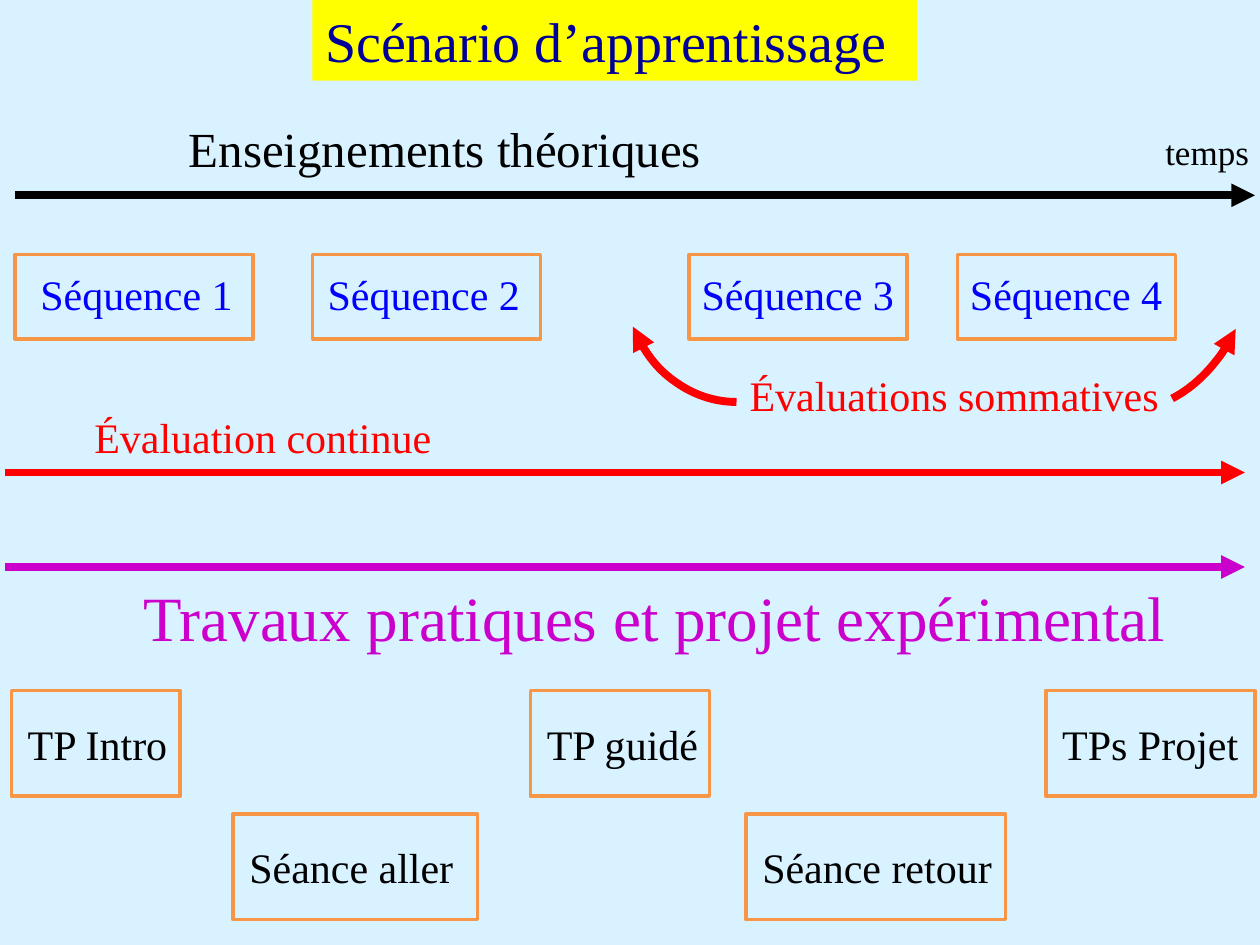
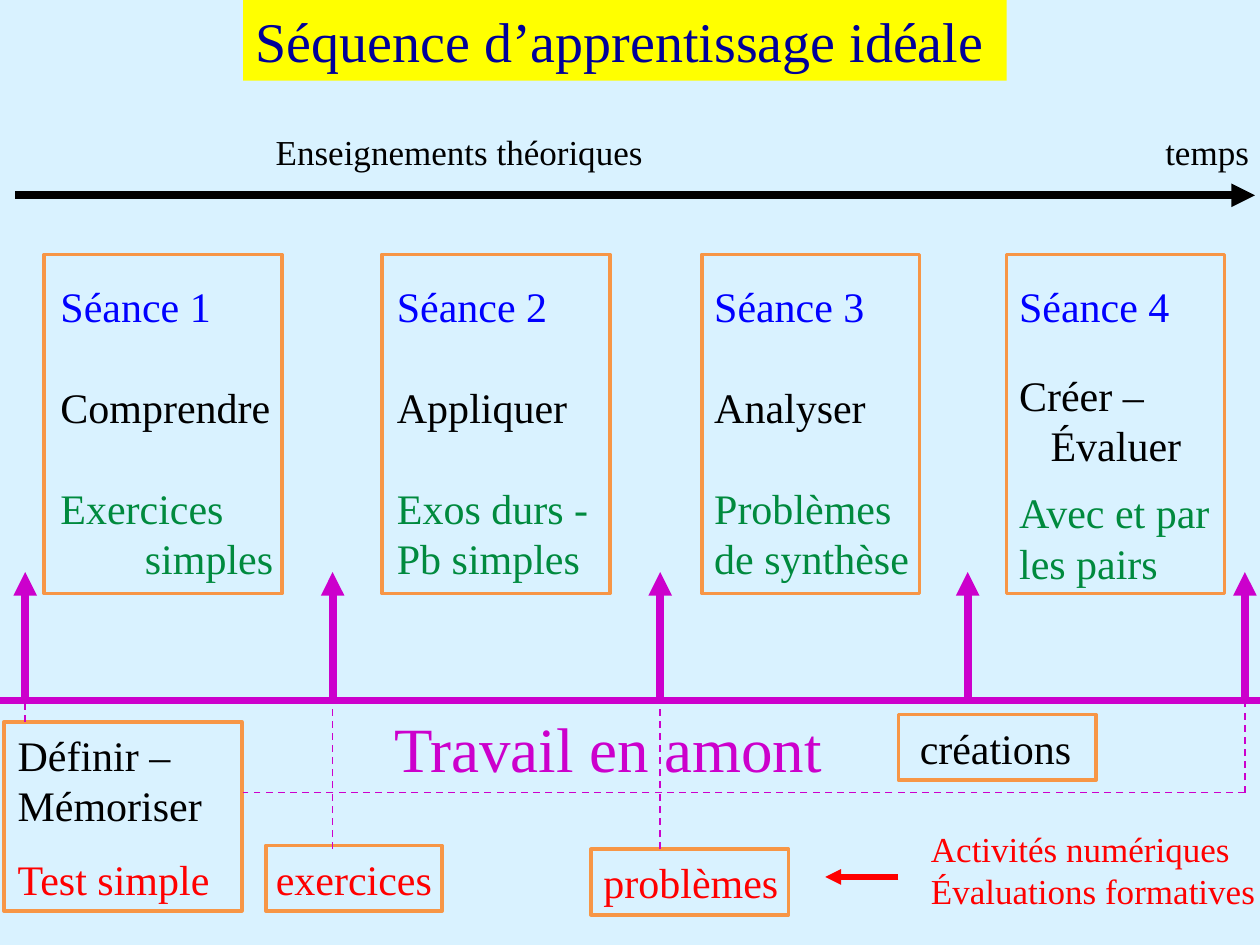
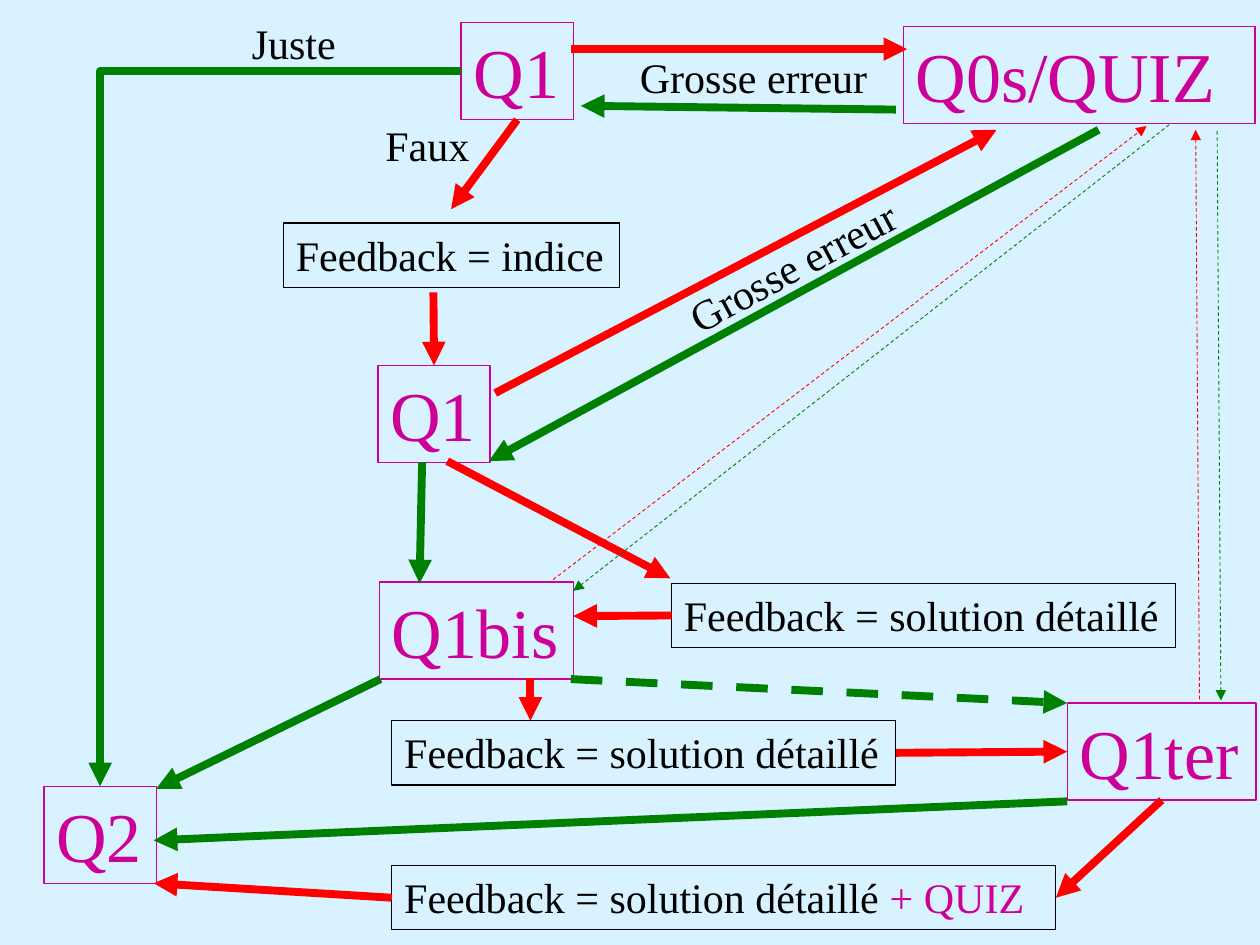
from dataclasses import dataclass

from lxml import etree
from pptx import Presentation
from pptx.dml.color import RGBColor
from pptx.enum.dml import MSO_LINE
from pptx.enum.shapes import MSO_CONNECTOR, MSO_SHAPE
from pptx.enum.text import MSO_ANCHOR, MSO_AUTO_SIZE, PP_ALIGN
from pptx.oxml.ns import qn
from pptx.util import Inches, Pt

STRAIGHT, ELBOW = MSO_CONNECTOR.STRAIGHT, MSO_CONNECTOR.ELBOW
RECTANGLE, ARC = MSO_SHAPE.RECTANGLE, MSO_SHAPE.ARC
TOP, MIDDLE = MSO_ANCHOR.TOP, MSO_ANCHOR.MIDDLE
LEFT, DASH, FIXED = PP_ALIGN.LEFT, MSO_LINE.DASH, MSO_AUTO_SIZE.NONE
TITLE_ONLY, BLANK = 5, 6
SITE_TOP, SITE_LEFT, SITE_BOTTOM, SITE_RIGHT = range(4)
SITES = {SITE_TOP: (0.5, 0), SITE_LEFT: (0, 0.5), SITE_BOTTOM: (0.5, 1), SITE_RIGHT: (1, 0.5)}


@dataclass(frozen=True)
class Theme:
    font: str = "Times New Roman"
    background: str = "D9F2FF"
    band: str = "FFFF00"
    title: str = "000099"
    ink: str = "000000"
    blue: str = "0000FF"
    red: str = "FF0000"
    violet: str = "CC00CC"
    magenta: str = "CC0099"
    exercise: str = "008A3E"
    green: str = "008000"
    orange: str = "F79646"
    small: int = 20
    body: int = 24
    large: int = 28
    heading: int = 32
    banner: int = 36
    question: int = 40
    thick: float = 4.5
    medium: float = 3
    frame: float = 2
    thin: float = 1
    outline: float = 0.75
    hairline: float = 0.5


THEME = Theme()


def paragraph(text, color=THEME.ink, before=0, indent=0):
    return {"spans": [(text, color)], "before": before, "indent": indent}


TIME_AXIS = ((0.12, 1.55), (9.96, 1.55))
TIME_LABEL = ("temps", (9.15, 0.99, 0.86, 0.44), THEME.small, THEME.ink)

SCENARIO_TITLE = ("Scénario d’apprentissage", 2.48, 4.8)
SEQUENCE_TOP, SEQUENCE_HEIGHT = 2.02, 0.67
SEQUENCES = [("Séquence 1", 0.12, 1.89, 0.2), ("Séquence 2", 2.48, 1.81, 0.12),
             ("Séquence 3", 5.47, 1.73, 0.1), ("Séquence 4", 7.6, 1.73, 0.1)]
PRACTICAL_TOPS, PRACTICAL_HEIGHT = (5.48, 6.46), 0.84
PRACTICALS = [("TP Intro", 0.09, 1.34), ("Séance aller", 1.85, 1.94), ("TP guidé", 4.21, 1.42),
              ("Séance retour", 5.92, 2.06), ("TPs Projet", 8.3, 1.66)]
SCENARIO_LABELS = [
    ("Enseignements théoriques", (1.4, 0.89, 4.26, 0.57), THEME.large, THEME.ink),
    ("Évaluations sommatives", (5.85, 2.88, 3.48, 0.5), THEME.body, THEME.red),
    ("Évaluation continue", (0.65, 3.22, 2.9, 0.5), THEME.body, THEME.red),
    ("Travaux pratiques et projet expérimental", (1.04, 4.54, 8.4, 0.71), THEME.banner, THEME.violet),
    TIME_LABEL,
]
SCENARIO_AXES = [(3.75, THEME.red), (4.5, THEME.violet)]
EVALUATION_ARCS = [((4.94, 1.14, 1.81, 2.05), 180, (162, 199.53), "tailEnd"),
                   ((7.94, 1.28, 2.27, 1.71), 105, (172.83, 199.53), "headEnd")]

SEQUENCE_TITLE = ("Séquence d’apprentissage idéale", 1.93, 6.06)
SESSION_TOP, SESSION_HEIGHT, SKIPPED_LINE = 2.02, 2.69, 28.8
SESSIONS = [
    (0.35, 1.89, 0.13, [paragraph("Séance 1", THEME.blue),
                        paragraph("Comprendre", before=SKIPPED_LINE),
                        paragraph("Exercices", THEME.exercise, SKIPPED_LINE),
                        paragraph("simples", THEME.exercise, indent=0.67)]),
    (3.03, 1.81, 0.12, [paragraph("Séance 2", THEME.blue),
                        paragraph("Appliquer", before=SKIPPED_LINE),
                        paragraph("Exos durs - Pb simples", THEME.exercise, SKIPPED_LINE)]),
    (5.57, 1.73, 0.1, [paragraph("Séance 3", THEME.blue),
                       paragraph("Analyser", before=SKIPPED_LINE),
                       paragraph("Problèmes de synthèse", THEME.exercise, SKIPPED_LINE)]),
    (7.99, 1.73, 0.1, [paragraph("Séance 4", THEME.blue),
                       paragraph("Créer –", before=21.6),
                       paragraph("Évaluer", indent=0.25),
                       paragraph("Avec et par les pairs", THEME.exercise, 9.6)]),
]
HOMEWORK = [
    ((0.03, 5.73, 1.89, 1.5), 0.11, [paragraph("Définir –"), paragraph("Mémoriser"),
                                     paragraph("Test simple", THEME.red, 13.2)]),
    ((2.11, 6.71, 1.4, 0.52), 0.08, [paragraph("exercices", THEME.red)]),
    ((4.69, 6.74, 1.57, 0.52), 0.1, [paragraph("problèmes", THEME.red)]),
    ((7.13, 5.67, 1.57, 0.52), 0.17, [paragraph("créations")]),
]
SEQUENCE_LABELS = [
    ("Enseignements théoriques", (2.09, 0.99, 3.1, 0.44), THEME.small, THEME.ink),
    ("Travail en amont", (3.03, 5.58, 3.63, 0.71), THEME.banner, THEME.violet),
    ("Activités numériques\nÉvaluations formatives", (7.29, 6.52, 2.79, 0.77), THEME.small, THEME.red),
    TIME_LABEL,
]
UPSTREAM_Y, ARROW_TIP_Y = 5.56, 4.54
UPSTREAM_ARROWS = [0.2, 2.64, 5.24, 7.68, 9.88]
HOMEWORK_LINKS = [((5.24, 6.74), (5.24, 5.4)), ((2.64, 6.74), (2.64, 5.4)),
                  ((0.2, 5.73), (0.2, 5.56)), ((9.88, 6.29), (9.88, 5.48)),
                  ((9.88, 6.29), (1.93, 6.29))]
FORMATIVE_ARROW = ((7.13, 6.96), (6.55, 6.96))

QUESTION_HEIGHT, FEEDBACK_HEIGHT = 0.77, 0.51
QUESTIONS = {
    "first": ("Q1", 3.66, 0.18, 0.89), "next": ("Q2", 0.35, 6.24, 0.89),
    "retry": ("Q1", 3, 2.9, 0.89), "basics": ("Q0s/QUIZ", 7.17, 0.21, 2.79),
    "second": ("Q1bis", 3.01, 4.62, 1.54), "third": ("Q1ter", 8.47, 5.58, 1.5),
}
SOLUTION = "Feedback = solution détaillé"
FEEDBACKS = {
    "hint": ([("Feedback = indice", THEME.ink)], 2.25, 1.77, 2.67),
    "solution": ([(SOLUTION, THEME.ink)], 5.33, 4.63, 4),
    "second solution": ([(SOLUTION, THEME.ink)], 3.11, 5.72, 4),
    "last solution": ([(SOLUTION + " ", THEME.ink), ("+ QUIZ", THEME.magenta)], 3.11, 6.87, 5.27),
}
ANSWER_LABELS = [("Faux", (2.96, 0.9, 0.88, 0.51), 0), ("Juste", (1.9, 0.09, 0.88, 0.51), 0),
                 ("Grosse erreur", (4.98, 0.36, 2.02, 0.5), 0),
                 ("Grosse erreur", (5.29, 1.85, 2.03, 0.51), 331.7)]
WRONG_PATHS = [
    (("first", SITE_BOTTOM), (3.58, 1.66)),
    ((3.44, 2.32), ("retry", SITE_TOP)),
    ((3.55, 3.66), (5.32, 4.59)),
    ((4.53, 0.39), (7.2, 0.39)),
    ((3.93, 3.12), (7.91, 1.03)),
    (("solution", SITE_LEFT), (4.55, 4.89)),
    ((4.21, 5.38), (4.21, 5.72)),
    (("second solution", SITE_RIGHT), ("third", SITE_LEFT)),
    (("third", SITE_BOTTOM), ("last solution", SITE_RIGHT)),
    (("last solution", SITE_LEFT), (1.22, 7.01)),
]
RIGHT_PATHS = [((7.11, 0.87), (4.61, 0.84)), ((8.72, 1.03), (3.88, 3.66)),
               ((3.35, 3.67), (3.33, 4.63)), ((3.02, 5.39), (1.24, 6.26)),
               ((8.47, 6.36), (1.22, 6.67))]
WRONG_DETOURS = [((4.39, 4.6), (9.1, 1)), ((9.52, 5.55), (9.49, 1.03))]
RIGHT_RETURNS = [((9.66, 1.04), (9.69, 5.56)), ((9.28, 0.99), (4.55, 4.69))]
OPTIONAL_PATHS = [((4.53, 5.39), (8.47, 5.58))]
PATH_GROUPS = [
    (WRONG_PATHS, THEME.red, THEME.thick, None),
    (RIGHT_PATHS, THEME.green, THEME.thick, None),
    (WRONG_DETOURS, THEME.red, THEME.hairline, DASH),
    (RIGHT_RETURNS, THEME.green, THEME.hairline, DASH),
    (OPTIONAL_PATHS, THEME.green, THEME.thick, DASH),
]


def apply(target, values):
    for name, value in values.items():
        setattr(target, name, value)


def inches(values):
    return [Inches(value) for value in values]


def write(frame, paragraphs, size, **values):
    apply(frame, {"auto_size": FIXED, "word_wrap": True, "vertical_anchor": TOP} | values)
    for index, content in enumerate(paragraphs):
        para = frame.add_paragraph() if index else frame.paragraphs[0]
        apply(para, {"alignment": LEFT, "space_before": Pt(content["before"])})
        if content["indent"]:
            para._p.get_or_add_pPr().set("marL", str(Inches(content["indent"])))
        for text, color in content["spans"]:
            span = para.add_run()
            span.text = text
            apply(span.font, {"name": THEME.font, "size": Pt(size)})
            span.font.color.rgb = RGBColor.from_string(color)


def draw_line(line, color, width, dash=None):
    line.color.rgb = RGBColor.from_string(color)
    line.width = Pt(width)
    if dash:
        line.dash_style = dash


def add_arrowhead(shape, end="tailEnd"):
    etree.SubElement(shape.line._get_or_add_ln(), qn(f"a:{end}"), type="triangle")


def add_title(slide, text, left, width):
    title = slide.shapes.title
    apply(title, dict(zip(("left", "top", "width", "height"), inches((left, 0, width, 0.64)))))
    title.fill.solid()
    title.fill.fore_color.rgb = RGBColor.from_string(THEME.band)
    write(title.text_frame, [paragraph(text, THEME.title)], THEME.heading, vertical_anchor=MIDDLE)


def add_shape(slide, kind, at, color, width):
    shape = slide.shapes.add_shape(kind, *inches(at))
    shape.shadow.inherit = False
    shape.fill.background()
    draw_line(shape.line, color, width)
    return shape


def add_card(slide, at, paragraphs, margin, **values):
    card = add_shape(slide, RECTANGLE, at, THEME.orange, THEME.frame)
    write(card.text_frame, paragraphs, THEME.body,
          **({"vertical_anchor": MIDDLE, "margin_left": Inches(margin), "margin_right": 0} | values))


def add_label(slide, text, at, size, color, rotation=0):
    label = slide.shapes.add_textbox(*inches(at))
    label.rotation = rotation
    write(label.text_frame, [paragraph(row, color) for row in text.split("\n")], size, word_wrap=False)


def add_line(slide, start, end, color, width, dash=None, arrow=True, boxes=None, kind=STRAIGHT):
    points = []
    for point in (start, end):
        if isinstance(point[0], str):
            box = boxes[point[0]]
            across, down = SITES[point[1]]
            points += [int(box.left + box.width * across), int(box.top + box.height * down)]
        else:
            points += inches(point)
    line = slide.shapes.add_connector(kind, *points)
    for point, connect in ((start, line.begin_connect), (end, line.end_connect)):
        if isinstance(point[0], str):
            connect(boxes[point[0]], point[1])
    draw_line(line.line, color, width, dash)
    if arrow:
        add_arrowhead(line)
    etree.SubElement(line._element.spPr, qn("a:effectLst"))
    return line


def build_scenario(deck):
    slide = deck.slides.add_slide(deck.slide_layouts[TITLE_ONLY])
    add_title(slide, *SCENARIO_TITLE)
    for text, left, width, margin in SEQUENCES:
        add_card(slide, (left, SEQUENCE_TOP, width, SEQUENCE_HEIGHT),
                 [paragraph(text, THEME.blue)], margin, margin_bottom=Inches(0.1))
    for index, (text, left, width) in enumerate(PRACTICALS):
        add_card(slide, (left, PRACTICAL_TOPS[index % 2], width, PRACTICAL_HEIGHT),
                 [paragraph(text)], 0.13)
    for label in SCENARIO_LABELS:
        add_label(slide, *label)
    add_line(slide, *TIME_AXIS, THEME.ink, THEME.thick)
    for y, color in SCENARIO_AXES:
        add_line(slide, (0.04, y), (9.88, y), color, THEME.thick)
    for at, rotation, angles, end in EVALUATION_ARCS:
        arc = add_shape(slide, ARC, at, THEME.red, THEME.thick)
        arc.rotation = rotation
        for index, angle in enumerate(angles):
            arc.adjustments[index] = angle
        add_arrowhead(arc, end)


def build_sequence(deck):
    slide = deck.slides.add_slide(deck.slide_layouts[TITLE_ONLY])
    add_title(slide, *SEQUENCE_TITLE)
    for left, width, margin, paragraphs in SESSIONS:
        add_card(slide, (left, SESSION_TOP, width, SESSION_HEIGHT), paragraphs, margin,
                 vertical_anchor=TOP, margin_top=Inches(0.21))
    for at, margin, paragraphs in HOMEWORK:
        add_card(slide, at, paragraphs, margin)
    for label in SEQUENCE_LABELS:
        add_label(slide, *label)
    add_line(slide, *TIME_AXIS, THEME.ink, THEME.thick)
    add_line(slide, (0, UPSTREAM_Y), (10, UPSTREAM_Y), THEME.violet, THEME.thick, arrow=False)
    for x in UPSTREAM_ARROWS:
        add_line(slide, (x, UPSTREAM_Y), (x, ARROW_TIP_Y), THEME.violet, THEME.thick)
    for start, end in HOMEWORK_LINKS:
        add_line(slide, start, end, THEME.violet, THEME.thin, DASH, arrow=False)
    add_line(slide, *FORMATIVE_ARROW, THEME.red, THEME.medium)


def build_questions(deck):
    slide = deck.slides.add_slide(deck.slide_layouts[BLANK])
    boxes = {}
    for name, (text, left, top, width) in QUESTIONS.items():
        boxes[name] = add_shape(slide, RECTANGLE, (left, top, width, QUESTION_HEIGHT),
                                THEME.magenta, THEME.outline)
        write(boxes[name].text_frame, [paragraph(text, THEME.magenta)], THEME.question, word_wrap=False)
    for name, (spans, left, top, width) in FEEDBACKS.items():
        boxes[name] = add_shape(slide, RECTANGLE, (left, top, width, FEEDBACK_HEIGHT),
                                THEME.ink, THEME.outline)
        write(boxes[name].text_frame, [{"spans": spans, "before": 0, "indent": 0}],
              THEME.body, word_wrap=False)
    for text, at, rotation in ANSWER_LABELS:
        add_label(slide, text, at, THEME.body, THEME.ink, rotation)
    for paths, color, width, dash in PATH_GROUPS:
        for start, end in paths:
            add_line(slide, start, end, color, width, dash, boxes=boxes)
    shortcut = add_line(slide, ("first", SITE_LEFT), ("next", SITE_TOP), THEME.green, THEME.thick,
                        boxes=boxes, kind=ELBOW)
    shortcut._element.spPr.prstGeom.set("prst", "bentConnector2")


def main():
    deck = Presentation()
    deck.slide_width, deck.slide_height = inches((10, 7.5))
    fill = deck.slide_master.background.fill
    fill.solid()
    fill.fore_color.rgb = RGBColor.from_string(THEME.background)
    for build in (build_scenario, build_sequence, build_questions):
        build(deck)
    deck.save("out.pptx")


if __name__ == "__main__":
    main()
